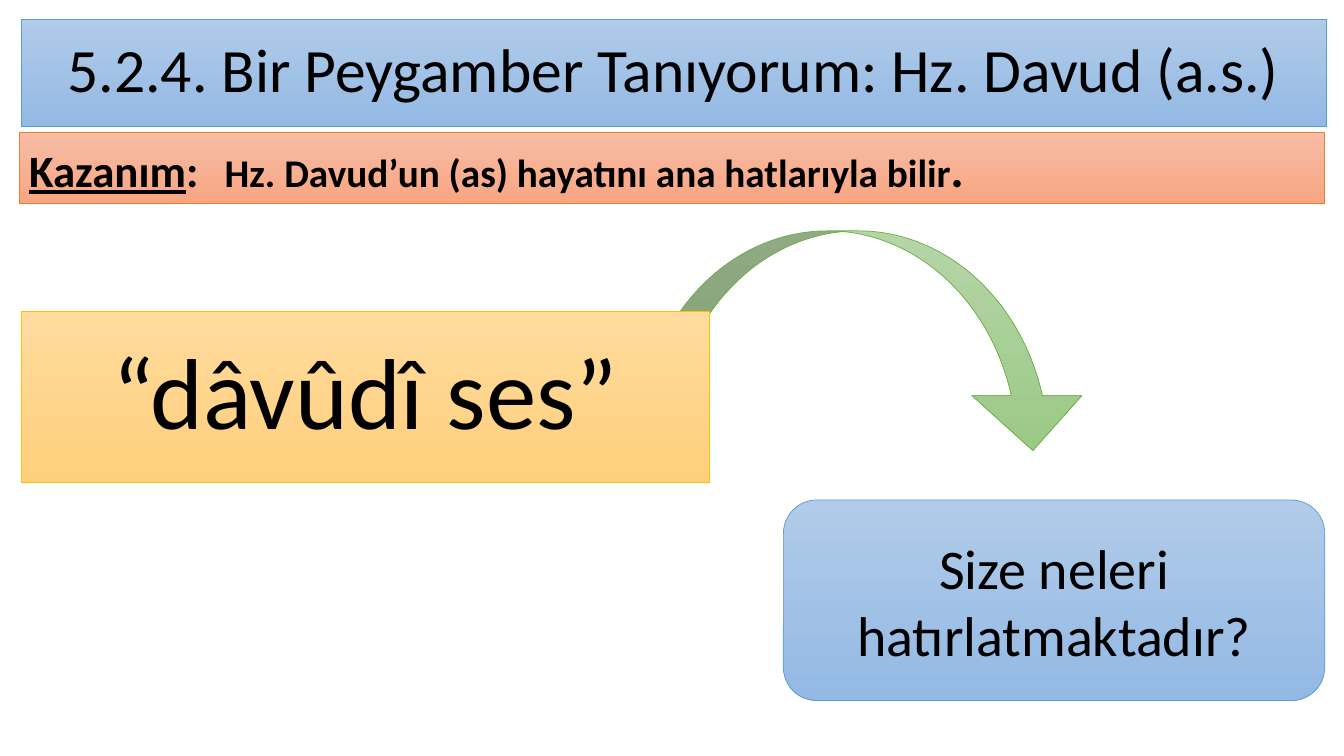
"""Build a lesson slide about Hz. Davud with a goal bar and a question."""
from lxml import etree
from pptx import Presentation
from pptx.dml.color import RGBColor
from pptx.enum.shapes import MSO_SHAPE as Kind
from pptx.enum.text import MSO_ANCHOR as Anchor, PP_ALIGN as Align
from pptx.oxml.ns import qn
from pptx.util import Inches, Pt

BLACK = RGBColor(0, 0, 0)
BLUE = [RGBColor.from_string(c) for c in ("B1CBE9", "93B9E4", "5B9BD5")]
ORANGE = [RGBColor.from_string(c) for c in ("F7BDA5", "F8A582", "ED7D31")]
GOLD = [RGBColor.from_string(c) for c in ("FFDB9E", "FFD07C", "FFC000")]
GREEN = [RGBColor.from_string(c) for c in ("B5D5A7", "9CC987", "70AD47")]

FONT = "Calibri"
TITLE = [("5.2.4. Bir Peygamber Tanıyorum: Hz. Davud (a.s.)", 44, False)]
GOAL = [
    ("Kazanım", 32, True),
    (":", 32, False),
    ("\tHz. Davud’un (as) hayatını ana hatlarıyla bilir", 28, False),
    (".", 36, False),
]
VOICE = [("“dâvûdî ses”", 72, False)]
ASK = [("Size neleri hatırlatmaktadır?", 40, False)]
GOAL_TAB = 1.94


def add_box(slide, kind, area, tones):
    box = slide.shapes.add_shape(kind, *map(Inches, area))
    box.shadow.inherit = False
    top, base, edge = tones
    box.fill.gradient()
    box.fill.gradient_angle = 270
    for stop, tone in zip(box.fill.gradient_stops, (top, base)):
        stop.color.rgb = tone
    box.line.color.rgb = edge
    box.line.width = Pt(0.5)
    return box


def write(box, runs, bold=False, align=Align.CENTER, anchor=Anchor.MIDDLE,
          space=1.0, tab=None):
    frame = box.text_frame
    frame.word_wrap = True
    frame.vertical_anchor = anchor
    para = frame.paragraphs[0]
    para.alignment = align
    para.line_spacing = space
    if tab:
        tabs = etree.SubElement(para._p.get_or_add_pPr(), qn("a:tabLst"))
        etree.SubElement(tabs, qn("a:tab"), pos=str(Inches(tab)), algn="l")
    for text, size, under in runs:
        run = para.add_run()
        run.text = text
        font = run.font
        font.name, font.size, font.bold = FONT, Pt(size), bold
        font.underline = under
        font.color.rgb = BLACK


def main():
    deck = Presentation()
    deck.slide_width, deck.slide_height = Inches(13.33), Inches(7.5)
    slide = deck.slides.add_slide(deck.slide_layouts[6])

    arrow = add_box(slide, Kind.CURVED_DOWN_ARROW, (6.32, 2.29, 4.47, 2.18), GREEN)
    for i, value in enumerate((0.141, 0.5, 0.25)):
        arrow.adjustments[i] = value

    title = add_box(slide, Kind.RECTANGLE, (0.21, 0.19, 12.95, 1.06), BLUE)
    write(title, TITLE, space=0.9)
    goal = add_box(slide, Kind.RECTANGLE, (0.19, 1.31, 12.95, 0.71), ORANGE)
    write(goal, GOAL, bold=True, align=Align.LEFT, anchor=Anchor.TOP, tab=GOAL_TAB)
    voice = add_box(slide, Kind.RECTANGLE, (0.21, 3.09, 6.83, 1.7), GOLD)
    write(voice, VOICE, space=0.9)
    ask = add_box(slide, Kind.ROUNDED_RECTANGLE, (7.77, 4.96, 5.37, 1.99), BLUE)
    write(ask, ASK)

    deck.save("out.pptx")


if __name__ == "__main__":
    main()
